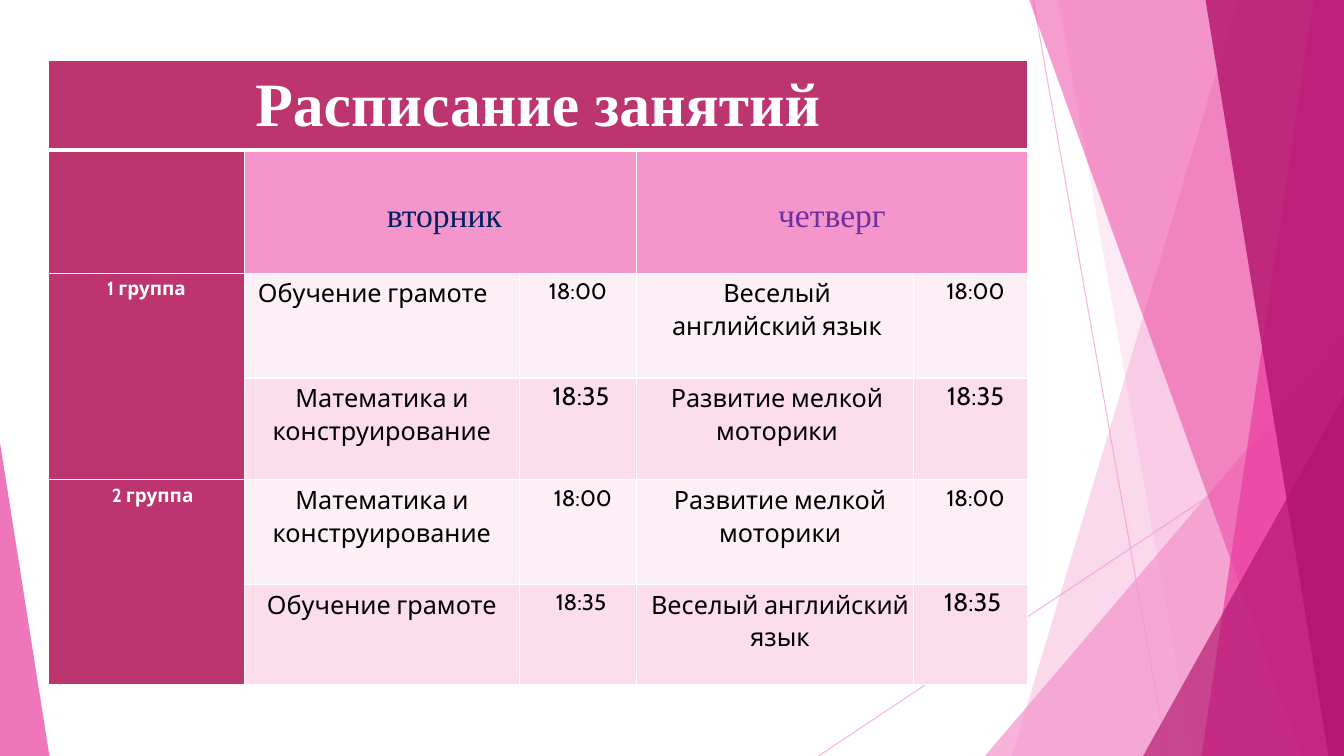
"""Build the weekly class schedule slide with its faceted pink border."""
from lxml import etree
from pptx import Presentation
from pptx import util as u
from pptx.dml.color import RGBColor
from pptx.enum import shapes, text
from pptx.oxml import ns

COLORS = {
    "white": "FFFFFF", "black": "000000", "light": "F496CB", "bright": "EB3D9F",
    "deep": "B2136D", "header": "BC356F", "pale": "FDEFF6", "blush": "FBDDEC",
    "navy": "002060", "violet": "7030A0",
}
WIDTH, HEIGHT = u.Inches(13.333), u.Inches(7.5)


def share(x, y):
    """Turn percentages of the slide into a point on it."""
    return round(WIDTH * x / 100), round(HEIGHT * y / 100)


def paint(fill, color, opacity=100):
    """Fill solidly with a named colour at an opacity in percent."""
    fill.solid()
    fill.fore_color.rgb = RGBColor.from_string(COLORS[color])
    if opacity < 100:
        tint = fill._xPr.find(".//" + ns.qn("a:srgbClr"))
        etree.SubElement(tint, ns.qn("a:alpha"), val=str(opacity * 1000))


presentation = Presentation()
presentation.slide_width, presentation.slide_height = WIDTH, HEIGHT
slide = presentation.slides.add_slide(presentation.slide_layouts[6])

for start, end in [((76.88, 0), (86.85, 100)), ((100, 53.73), (60.9, 100))]:
    ray = slide.shapes.add_connector(
        shapes.MSO_CONNECTOR.STRAIGHT, *share(*start), *share(*end))
    ray.line.width = u.Pt(0.75)
    paint(ray.line.fill, "light", 70)
    etree.SubElement(ray._element.spPr, ns.qn("a:effectLst"))

bands = [
    ("band", 92.1, 75.3, "light", 36),
    ("band", 78.75, 88.73, "light", 20),
    ("triangle", (73.28, 44.4), (26.72, 55.6), 1, "light", 72),
    ("band", 76.58, 96.83, "bright", 50),
    ("band", 97.73, 89.4, "bright", 70),
    ("band", 89.7, 98.85, "deep", 80),
    ("triangle", (85.05, 52.4), (14.95, 47.6), 1, "deep", 66),
    ("triangle", (0, 58.53), (3.68, 41.47), 0, "bright", 70),
]
for kind, *geometry, color, opacity in bands:
    if kind == "band":
        top, bottom = geometry
        outline = slide.shapes.build_freeform(*share(top, 0))
        outline.add_line_segments(
            [share(100, 0), share(100, 100), share(bottom, 100)], close=True)
        facet = outline.convert_to_shape()
    else:
        corner, size, apex = geometry
        facet = slide.shapes.add_shape(
            shapes.MSO_SHAPE.ISOSCELES_TRIANGLE, *share(*corner), *share(*size))
        facet.adjustments[0] = apex
    facet.shadow.inherit = False
    facet.line.fill.background()
    paint(facet.fill, color, opacity)

column_widths = [1.94, 2.73, 1.16, 2.75, 1.13]
row_heights = [0.89, 1.22, 1.04, 1.01, 1.04, 0.99]
table = slide.shapes.add_table(
    len(row_heights), len(column_widths), *share(3.63, 8),
    u.Inches(sum(column_widths)), u.Inches(sum(row_heights))).table
for column, width in zip(table.columns, column_widths):
    column.width = u.Inches(width)
for row, height in zip(table.rows, row_heights):
    row.height = u.Inches(height)

for r in range(len(row_heights)):
    for c in range(len(column_widths)):
        cell = table.cell(r, c)
        stripe = "light" if r == 1 else ("blush" if r % 2 else "pale")
        paint(cell.fill, "header" if r == 0 or c == 0 else stripe)
        thick = {"lnB": r == 0, "lnT": r == 1}
        properties = cell._tc.get_or_add_tcPr()
        for place, side in enumerate(["lnL", "lnR", "lnT", "lnB"]):
            border = etree.Element(
                ns.qn("a:" + side), w=str(u.Pt(3 if thick.get(side) else 1)))
            solid = etree.SubElement(border, ns.qn("a:solidFill"))
            etree.SubElement(solid, ns.qn("a:srgbClr"), val=COLORS["white"])
            properties.insert(place, border)

for first, last in [((0, 0), (0, 4)), ((1, 1), (1, 2)), ((1, 3), (1, 4)),
                    ((2, 0), (3, 0)), ((4, 0), (5, 0))]:
    table.cell(*first).merge(table.cell(*last))

styles = {
    "title": ("Times New Roman", 44, True, "white", 1),
    "tuesday": ("Times New Roman", 24, False, "navy", 1.07),
    "thursday": ("Times New Roman", 24, False, "violet", 1.07),
    "group": ("Cabin", 13.5, True, "white", 1.07),
    "lesson": ("Cabin", 18, False, "black", 1.07),
    "time": ("Cabin", 16, False, "black", 1.07),
    "large time": ("Cabin", 18, False, "black", 1),
}
entries = [
    (0, 0, "Расписание занятий", "title", 0, 0),
    (1, 1, "вторник", "tuesday", 0.08, 0),
    (1, 3, "четверг", "thursday", 0, 0),
    (2, 0, "1 группа", "group", 0, 0),
    (2, 1, "Обучение грамоте", "lesson", 0, 0.18),
    (2, 2, "18:00", "time", 0, 0),
    (2, 3, "Веселый английский язык", "lesson", 0.12, 0.08),
    (2, 4, "18:00", "time", 0.1, 0),
    (3, 1, "Математика и конструирование", "lesson", 0, 0),
    (3, 2, "18:35", "large time", 0.06, 0),
    (3, 3, "Развитие мелкой моторики", "lesson", 0.04, 0),
    (3, 4, "18:35", "large time", 0.1, 0),
    (4, 0, "2 группа", "group", 0.12, 0),
    (4, 1, "Математика и конструирование", "lesson", 0, 0),
    (4, 2, "18:00", "time", 0.1, 0),
    (4, 3, "Развитие мелкой моторики", "lesson", 0.1, 0),
    (4, 4, "18:00", "time", 0.1, 0),
    (5, 1, "Обучение грамоте", "lesson", 0, 0),
    (5, 2, "18:35", "time", 0.06, 0),
    (5, 3, "Веселый английский язык", "lesson", 0.1, 0),
    (5, 4, "18:35", "large time", 0.04, 0),
]
for r, c, wording, style, left, right in entries:
    font_name, size, bold, color, spacing = styles[style]
    cell = table.cell(r, c)
    cell.text = wording
    middle = r < 2
    cell_format = {
        "margin_left": u.Inches(0.03 + left),
        "margin_right": u.Inches(0.03 + right),
        "margin_top": u.Inches(0.09 if r == 1 else 0.03),
        "margin_bottom": u.Inches(0.03),
        "vertical_anchor": text.MSO_ANCHOR.MIDDLE if middle else text.MSO_ANCHOR.TOP,
    }
    paragraph = cell.text_frame.paragraphs[0]
    paragraph_format = {"alignment": text.PP_ALIGN.CENTER, "line_spacing": spacing}
    font = paragraph.runs[0].font
    font_format = {"name": font_name, "size": u.Pt(size), "bold": bold}
    for target, values in [(cell, cell_format), (paragraph, paragraph_format),
                           (font, font_format)]:
        for name, value in values.items():
            setattr(target, name, value)
    paint(font.fill, color)

presentation.save("out.pptx")
